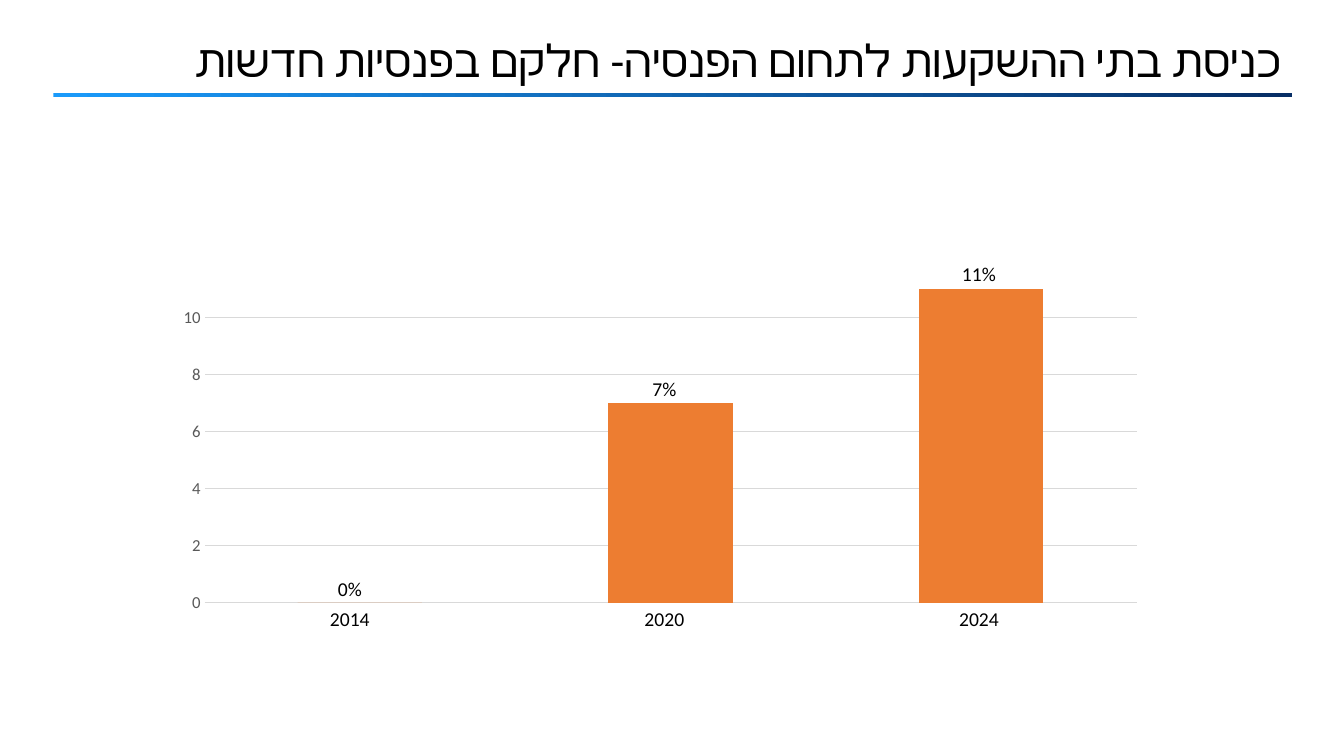
import pptx
import pptx.util
import pptx.chart.data
import pptx.dml.color
import pptx.enum.chart
import pptx.enum.shapes
import pptx.enum.text
import pptx.oxml
from lxml import etree

Inches, Pt = pptx.util.Inches, pptx.util.Pt
ALIGN, ANCHOR = pptx.enum.text.PP_ALIGN, pptx.enum.text.MSO_ANCHOR
FONT = "Calibri"


def color(code):
    return pptx.dml.color.RGBColor.from_string(code)


def write(left, top, width, height, words, size, align, anchor):
    box = slide.shapes.add_textbox(Inches(left), Inches(top), Inches(width), Inches(height))
    frame = box.text_frame
    frame.vertical_anchor = anchor
    para = frame.paragraphs[0]
    para.alignment = align
    para.line_spacing = 0.9
    run = para.add_run()
    run.text = words
    run.font.size = Pt(size)
    run.font.name = FONT
    run.font.color.rgb = color("000000")
    return frame


deck = pptx.Presentation()
deck.slide_width, deck.slide_height = Inches(13.33), Inches(7.5)
slide = deck.slides.add_slide(deck.slide_layouts[6])

# Gradient rule under the title
rule = slide.shapes.add_shape(pptx.enum.shapes.MSO_SHAPE.RECTANGLE,
                              Inches(0.53), Inches(0.92), Inches(12.28), Inches(0.04))
rule.shadow.inherit = False
rule.line.fill.background()
rule.fill.gradient()
rule.fill.gradient_angle = 0
for stop, place, code in zip(rule.fill.gradient_stops, (0, 1), ("1A9AFA", "072E65")):
    stop.position = place
    stop.color.rgb = color(code)

# Right-to-left title
title = write(0.53, 0.22, 12.28, 0.69, "כניסת בתי ההשקעות לתחום הפנסיה- חלקם בפנסיות חדשות",
              32, ALIGN.RIGHT, ANCHOR.BOTTOM)
title.word_wrap = True
para = title.paragraphs[0]
para._p.get_or_add_pPr().set("rtl", "1")
script = etree.SubElement(para.runs[0].font._element, pptx.oxml.ns.qn("a:cs"))
script.set("typeface", FONT)

# Column chart
years = ["2014", "2020", "2024"]
shares = [0, 7, 11]
data = pptx.chart.data.CategoryChartData()
data.categories = ["1", "2", "3"]
data.add_series("Series 1", shares)
chart = slide.shapes.add_chart(pptx.enum.chart.XL_CHART_TYPE.COLUMN_STACKED, Inches(1.82),
                               Inches(2.77), Inches(9.55), Inches(3.31), data).chart
chart.has_legend = False
chart.has_title = False
chart.font.name = FONT
chart.font.size = Pt(10)
chart.font.color.rgb = color("000000")
plot = chart.plots[0]
plot.gap_width, plot.overlap = 150, 100
plot.vary_by_categories = False
fill = plot.series[0].format.fill
fill.solid()
fill.fore_color.rgb = color("ED7D31")

# Axes
none = pptx.enum.chart.XL_TICK_MARK.NONE
for axis in (chart.category_axis, chart.value_axis):
    axis.major_tick_mark = axis.minor_tick_mark = none
    axis.tick_labels.font.size = Pt(12)
    axis.tick_labels.font.name = FONT
    axis.tick_labels.font.color.rgb = color("595959")
chart.category_axis.tick_label_position = pptx.enum.chart.XL_TICK_LABEL_POSITION.NONE
scale = chart.value_axis
scale.minimum_scale, scale.maximum_scale, scale.major_unit = 0, 11, 2
scale.format.line.fill.background()
scale.has_major_gridlines = True
for line in (chart.category_axis.format.line, scale.major_gridlines.format.line):
    line.color.rgb = color("D9D9D9")
    line.width = Pt(0.75)

# Fixed plot area
area = chart._chartSpace.chart.plotArea
for old in area.findall(pptx.oxml.ns.qn("c:layout")):
    area.remove(old)
marks = [("layoutTarget", "inner"), ("xMode", "edge"), ("yMode", "edge"),
         ("x", 0.02), ("y", 0.03), ("w", 0.97), ("h", 0.94)]
inner = "".join(f'<c:{tag} val="{val}"/>' for tag, val in marks)
area.insert(0, pptx.oxml.parse_xml(
    f'<c:layout {pptx.oxml.ns.nsdecls("c")}><c:manualLayout>{inner}</c:manualLayout></c:layout>'))

# Year below and share above each column
for i, (year, share) in enumerate(zip(years, shares)):
    mid = 3.47 + 3.12 * i
    top = 5.75 - 0.284 * share
    for words, y, wide, pad, anchor in ((year, 6.05, 0.44, 0, ANCHOR.TOP),
                                        (f"{share}%", top, 0.4, 0.03, ANCHOR.BOTTOM)):
        frame = write(mid - wide / 2, y, wide, 0.21, words, 14, ALIGN.CENTER, anchor)
        frame.word_wrap = False
        frame.margin_left = frame.margin_right = Inches(pad)
        frame.margin_top = frame.margin_bottom = 0

deck.save("out.pptx")
